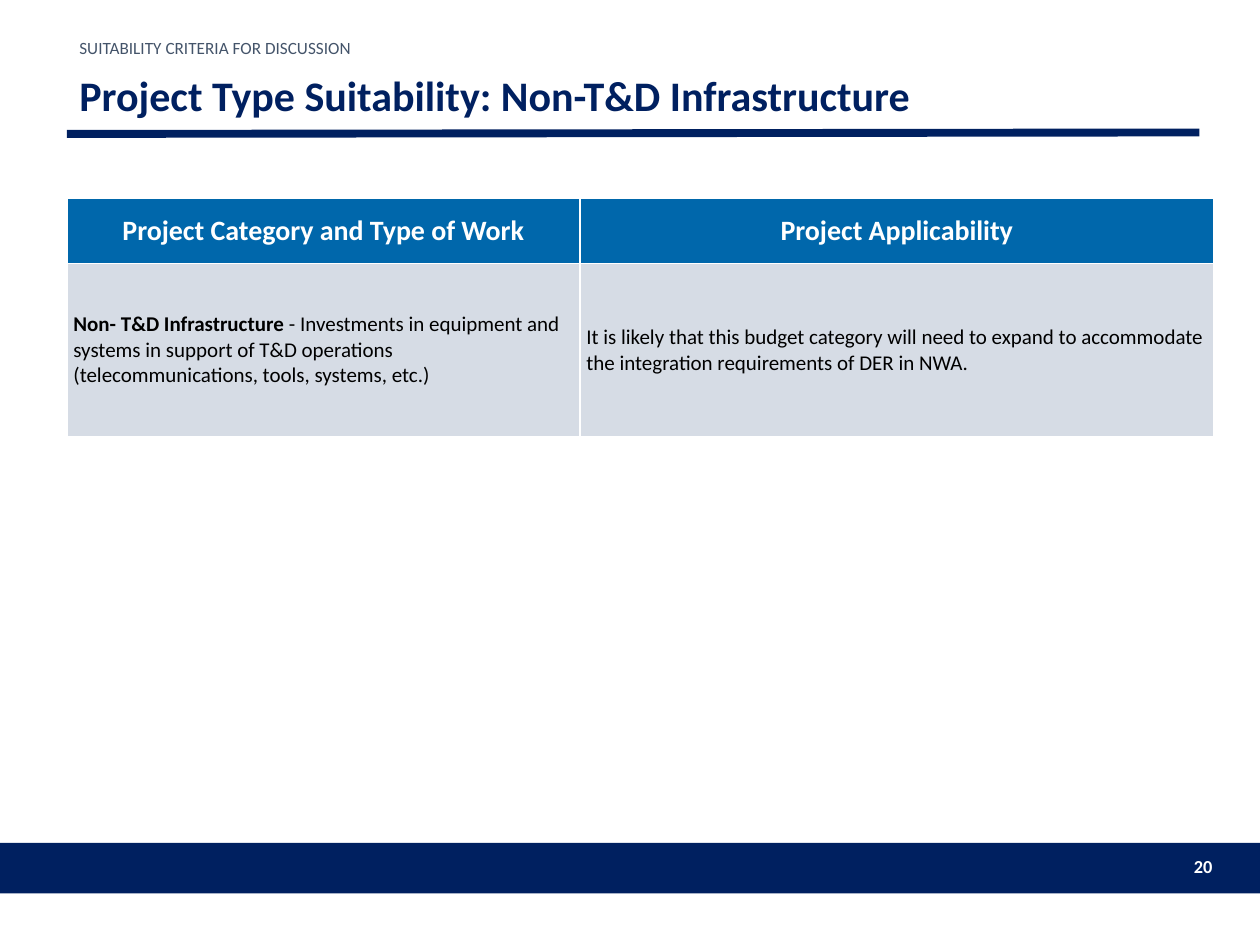
from lxml.etree import SubElement
from pptx import Presentation
from pptx.dml.color import RGBColor
from pptx.enum.shapes import MSO_CONNECTOR, MSO_SHAPE
from pptx.enum.text import MSO_ANCHOR, PP_ALIGN
from pptx.oxml.ns import qn
from pptx.util import Cm, Pt

# Content: each cell is a list of (text, bold) runs; None is a line break
KICKER = "SUITABILITY CRITERIA FOR DISCUSSION"
TITLE = "Project Type Suitability: Non-T&D Infrastructure"
PAGE = "20"
HEADER = [[("Project Category and Type of Work", True)],
          [("Project Applicability", True)]]
BODY = [[("Non- T&D Infrastructure ", True),
         ("- Investments in equipment and systems in support of T&D operations", False),
         None,
         ("(telecommunications, tools, systems, etc.)", False)],
        [("It is likely that this budget category will need to expand to "
          "accommodate the integration requirements of DER in NWA.", False)]]

NAVY = RGBColor(0x00, 0x20, 0x60)
BLUE = RGBColor(0x00, 0x67, 0xAB)
PALE = RGBColor(0xD6, 0xDC, 0xE5)
SLATE = RGBColor(0x44, 0x54, 0x6A)
WHITE = RGBColor(0xFF, 0xFF, 0xFF)
BLACK = RGBColor(0x00, 0x00, 0x00)
FONT = "Calibri"

# Layout in centimetres
SLIDE_W, SLIDE_H = 25.4, 19.05
LEFT, CONTENT_W = 1.35, 22.83
COLS, ROWS = [10.34, 12.78], [1.32, 3.5]


def style(font, size, color, bold=False):
    font.name, font.size, font.bold = FONT, Pt(size), bold
    font.color.rgb = color


def add_text(slide, text, box, size, color, bold=False, align=PP_ALIGN.LEFT):
    tf = slide.shapes.add_textbox(*map(Cm, box)).text_frame
    tf.word_wrap = True
    tf.vertical_anchor = MSO_ANCHOR.MIDDLE
    tf.margin_top = tf.margin_bottom = 0
    tf.text = text
    p = tf.paragraphs[0]
    p.alignment = align
    style(p.runs[0].font, size, color, bold)
    return p


def set_borders(cell, color, width):
    # Border lines must come before the fill in the cell properties
    tcPr = cell._tc.get_or_add_tcPr()
    for i, side in enumerate(("a:lnL", "a:lnR", "a:lnT", "a:lnB")):
        ln = SubElement(tcPr, qn(side), w=str(Pt(width)))
        fill = SubElement(ln, qn("a:solidFill"))
        SubElement(fill, qn("a:srgbClr"), val=str(color))
        tcPr.insert(i, ln)


def fill_cell(cell, parts, size, color, fill, align):
    cell.fill.solid()
    cell.fill.fore_color.rgb = fill
    set_borders(cell, WHITE, 1)
    cell.vertical_anchor = MSO_ANCHOR.MIDDLE
    cell.margin_left = cell.margin_right = Cm(0.13)
    cell.margin_top = cell.margin_bottom = Cm(0.13)
    p = cell.text_frame.paragraphs[0]
    p.alignment = align
    for part in parts:
        if part is None:
            p.add_line_break()
            continue
        r = p.add_run()
        r.text, bold = part
        style(r.font, size, color, bold)


prs = Presentation()
prs.slide_width, prs.slide_height = Cm(SLIDE_W), Cm(SLIDE_H)
s = prs.slides.add_slide(prs.slide_layouts[6])

# Footer band and page number
band = s.shapes.add_shape(MSO_SHAPE.RECTANGLE, 0, Cm(16.99), Cm(SLIDE_W), Cm(1.02))
band.shadow.inherit = False
band.fill.solid()
band.fill.fore_color.rgb = NAVY
band.line.fill.background()
add_text(s, PAGE, (23.65, 17.09, 1.04, 0.74), 10.5, WHITE, True, PP_ALIGN.RIGHT)

# Heading with its rule
rule = s.shapes.add_connector(MSO_CONNECTOR.STRAIGHT, Cm(LEFT), Cm(2.7),
                              Cm(LEFT + CONTENT_W), Cm(2.67))
rule.line.color.rgb = NAVY
rule.line.width = Pt(4.5)
SubElement(rule._element.spPr, qn("a:effectLst"))
title = add_text(s, TITLE, (LEFT, 1.27, CONTENT_W, 1.4), 24, NAVY, True)
title.line_spacing = 0.9
add_text(s, KICKER, (LEFT, 0.69, CONTENT_W, 0.56), 9.8, SLATE)

# Table
table = s.shapes.add_table(2, 2, Cm(LEFT), Cm(3.99),
                           Cm(sum(COLS)), Cm(sum(ROWS))).table
for col, width in zip(table.columns, COLS):
    col.width = Cm(width)
for row, height in zip(table.rows, ROWS):
    row.height = Cm(height)
for c, (head, body) in enumerate(zip(HEADER, BODY)):
    fill_cell(table.cell(0, c), head, 16, WHITE, BLUE, PP_ALIGN.CENTER)
    fill_cell(table.cell(1, c), body, 12, BLACK, PALE, PP_ALIGN.LEFT)

prs.save("out.pptx")
